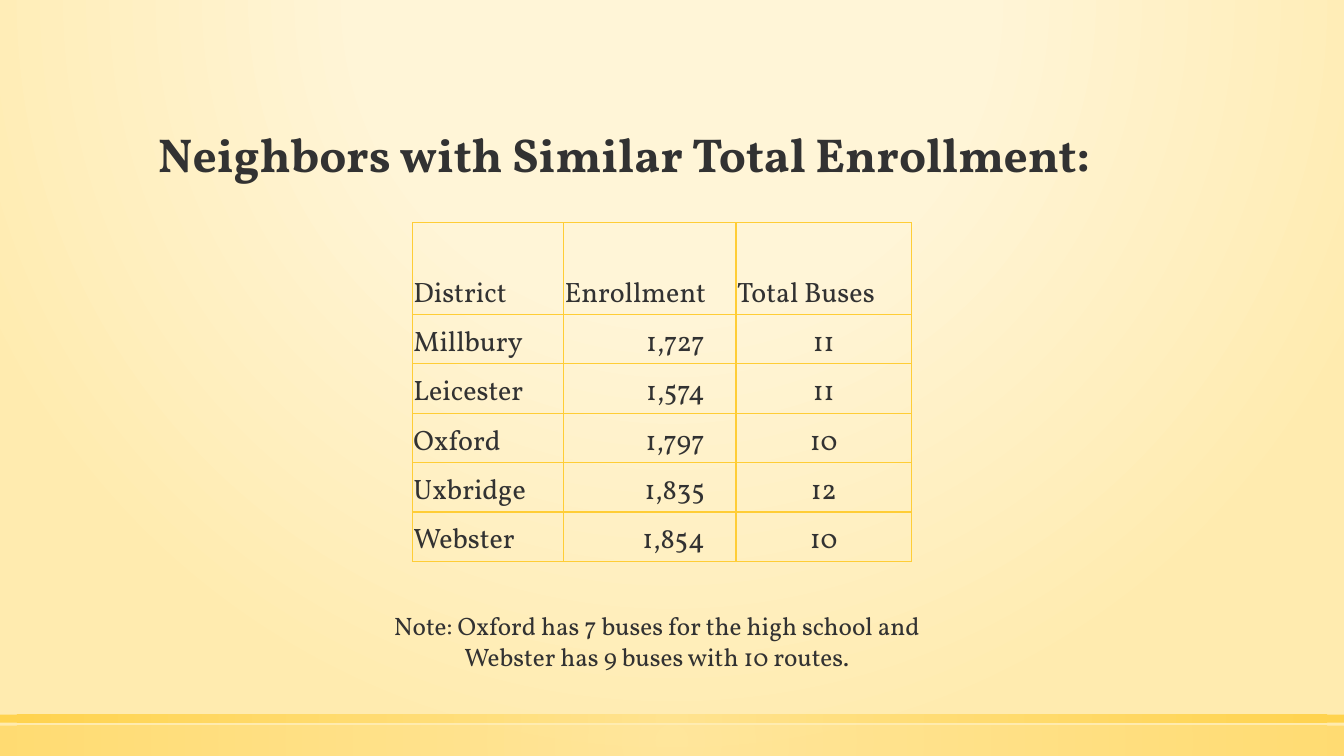
import pptx
import pptx.dml.color
import pptx.enum.shapes
import pptx.enum.text
import pptx.oxml
import pptx.oxml.ns
import pptx.util
from pptx.util import Inches

# Content
TITLE = "Neighbors with Similar Total Enrollment:"
ROWS = [
    ("District", "Enrollment", "Total Buses"),
    ("Millbury", "1,727", "11"),
    ("Leicester", "1,574", "11"),
    ("Oxford", "1,797", "10"),
    ("Uxbridge", "1,835", "12"),
    ("Webster", "1,854", "10"),
]
NOTE = ("Note: Oxford has 7 buses for the high school and "
        "Webster has 9 buses with 10 routes.")

# Style
FONT = "Vollkorn"
COLORS = {"text": "323232", "gold": "FFCD36", "light gold": "FFE186",
          "cream": "FFF5D7", "sand": "FFEBAF"}
COLUMN_WIDTHS = (1.5, 1.71, 1.74)
HEADER_HEIGHT, ROW_HEIGHT = 0.91, 0.49
NUMBER_INDENT = 0.31
BANDS = [(7.2, 0.3, 50), (7.09, 0.08, 80)]  # top, height, opacity

ALIGN = pptx.enum.text.PP_ALIGN
ANCHOR = pptx.enum.text.MSO_ANCHOR
BODY_ALIGNMENTS = (ALIGN.LEFT, ALIGN.RIGHT, ALIGN.CENTER)


def radial_fill(fill, element, stops, center_y):
    """Fill with a circular gradient; stops are (position, colour, opacity)."""
    fill.gradient()
    gradient = element.xpath(".//a:gradFill")[0]
    stop_xml = "".join(
        f'<a:gs pos="{position * 1000}"><a:srgbClr val="{COLORS[color]}">'
        f'<a:alpha val="{opacity * 1000}"/></a:srgbClr></a:gs>'
        for position, color, opacity in stops)
    replacement = pptx.oxml.parse_xml(
        f'<a:gradFill {pptx.oxml.ns.nsdecls("a")} rotWithShape="1">'
        f'<a:gsLst>{stop_xml}</a:gsLst><a:path path="circle"><a:fillToRect l="50000" '
        f't="{center_y * 1000}" r="50000" b="{(100 - center_y) * 1000}"/></a:path></a:gradFill>')
    gradient.getparent().replace(gradient, replacement)


def write(text_frame, text, size, alignment=ALIGN.LEFT, bold=False):
    text_frame.text = text
    paragraph = text_frame.paragraphs[0]
    paragraph.alignment = alignment
    font = paragraph.runs[0].font
    font.name, font.size, font.bold = FONT, pptx.util.Pt(size), bold
    font.color.rgb = pptx.dml.color.RGBColor.from_string(COLORS["text"])
    return paragraph


def add_borders(cell):
    properties = cell._tc.get_or_add_tcPr()
    for index, side in enumerate(("lnL", "lnR", "lnT", "lnB")):
        properties.insert(index, pptx.oxml.parse_xml(
            f'<a:{side} {pptx.oxml.ns.nsdecls("a")} w="12700"><a:solidFill>'
            f'<a:srgbClr val="{COLORS["gold"]}"/></a:solidFill></a:{side}>'))


presentation = pptx.Presentation()
presentation.slide_width, presentation.slide_height = Inches(13.33), Inches(7.5)
slide = presentation.slides.add_slide(presentation.slide_layouts[6])

# Background and bottom bands
radial_fill(slide.background.fill, slide.element,
            [(0, "cream", 100), (40, "cream", 100), (100, "sand", 100)], -80)
for top, height, opacity in BANDS:
    band = slide.shapes.add_shape(
        pptx.enum.shapes.MSO_SHAPE.RECTANGLE,
        0, Inches(top), presentation.slide_width, Inches(height))
    band.shadow.inherit = False
    band.line.fill.background()
    radial_fill(band.fill, band.element,
                [(0, "light gold", opacity), (100, "gold", opacity)], 50)

# Title
title = slide.shapes.add_textbox(Inches(1.47), Inches(0.51), Inches(10.4), Inches(1.35))
title.text_frame.word_wrap = True
title.text_frame.vertical_anchor = ANCHOR.BOTTOM
write(title.text_frame, TITLE, 34, bold=True).line_spacing = 0.9

# Enrollment table
table_height = HEADER_HEIGHT + ROW_HEIGHT * (len(ROWS) - 1)
table = slide.shapes.add_table(
    len(ROWS), len(COLUMN_WIDTHS), Inches(4.09), Inches(2.21),
    Inches(sum(COLUMN_WIDTHS)), Inches(table_height)).table
table.first_row = table.horz_banding = False
for column, width in zip(table.columns, COLUMN_WIDTHS):
    column.width = Inches(width)
for row_index, values in enumerate(ROWS):
    is_header = row_index == 0
    table.rows[row_index].height = Inches(HEADER_HEIGHT if is_header else ROW_HEIGHT)
    for column_index, value in enumerate(values):
        cell = table.cell(row_index, column_index)
        alignment = ALIGN.LEFT if is_header else BODY_ALIGNMENTS[column_index]
        cell.margin_left = cell.margin_top = Inches(0.01)
        cell.margin_right = Inches(NUMBER_INDENT if alignment == ALIGN.RIGHT else 0.01)
        cell.margin_bottom = 0
        cell.vertical_anchor = ANCHOR.BOTTOM
        cell.fill.background()
        add_borders(cell)
        write(cell.text_frame, value, 20, alignment)

# Note
note = slide.shapes.add_textbox(Inches(3.5), Inches(6.01), Inches(6.03), Inches(0.71))
note.text_frame.word_wrap = True
write(note.text_frame, NOTE, 18, ALIGN.CENTER)

presentation.save("out.pptx")
